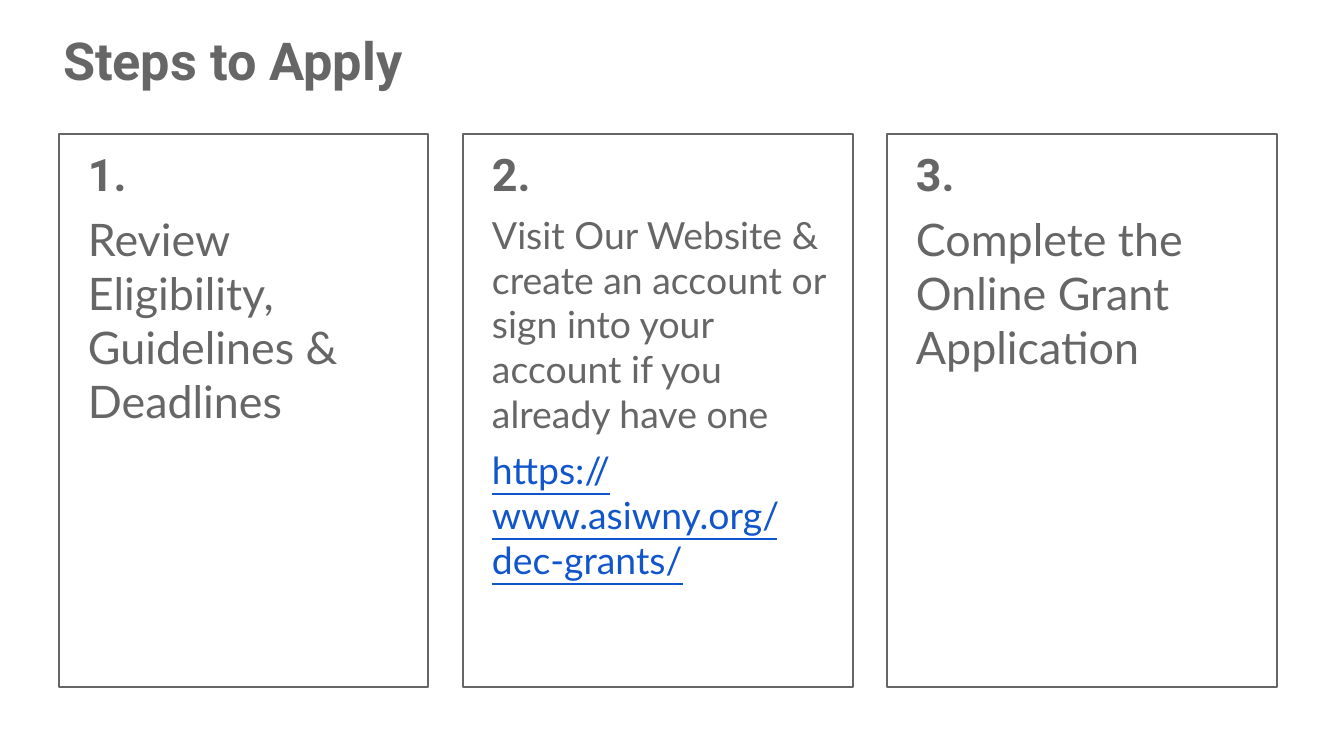
from pptx import Presentation
from pptx.dml.color import RGBColor
from pptx.enum.shapes import MSO_SHAPE
from pptx.enum.text import MSO_ANCHOR, MSO_AUTO_SIZE, PP_ALIGN
from pptx.util import Pt

RECTANGLE = MSO_SHAPE.RECTANGLE
TOP = MSO_ANCHOR.TOP
NO_FIT = MSO_AUTO_SIZE.NONE
LEFT = PP_ALIGN.LEFT

COLORS = {"gray": "666666", "white": "FFFFFF", "link": "1155CC"}
EMU_PER_PX = 914400 / 134.4
INSET = 13
INDENT = 16


def px(length):
    return round(length * EMU_PER_PX)


def write(frame, lines):
    frame.word_wrap = True
    frame.auto_size = NO_FIT
    frame.vertical_anchor = TOP
    frame.margin_left = frame.margin_right = px(INSET)
    frame.margin_top = frame.margin_bottom = px(INSET)
    for index, (text, font, size, bold, color) in enumerate(lines):
        paragraph = frame.add_paragraph() if index else frame.paragraphs[0]
        paragraph.alignment = LEFT
        paragraph.space_before = Pt(6 if index else 0)
        properties = paragraph._p.get_or_add_pPr()
        properties.set("marL", str(px(INDENT)))
        properties.set("indent", "0")
        run = paragraph.add_run()
        run.text = text
        run.font.name = font
        run.font.size = Pt(size)
        run.font.bold = bold
        run.font.underline = color == "link"
        run.font.color.rgb = RGBColor.from_string(COLORS[color])


presentation = Presentation()
presentation.slide_width = px(1344)
presentation.slide_height = px(756)
slide = presentation.slides.add_slide(presentation.slide_layouts[5])

heading = slide.shapes.title
heading.left, heading.top = px(34), px(15)
heading.width, heading.height = px(421), px(103)
write(heading.text_frame, [("Steps to Apply", "Roboto", 28, True, "gray")])

steps = [
    (59, 369, 24, [("Review Eligibility, Guidelines & Deadlines", "gray")]),
    (463, 390, 20, [
        ("Visit Our Website & create an account or sign into your account "
         "if you already have one", "gray"),
        ("https://www.asiwny.org/dec-grants/", "link"),
    ]),
    (887, 390, 24, [("Complete the Online Grant Application", "gray")]),
]

for number, (left, width, size, details) in enumerate(steps, 1):
    card = slide.shapes.add_shape(RECTANGLE, px(left), px(134), px(width), px(553))
    card.shadow.inherit = False
    card.fill.solid()
    card.fill.fore_color.rgb = RGBColor.from_string(COLORS["white"])
    card.line.color.rgb = RGBColor.from_string(COLORS["gray"])
    card.line.width = Pt(0.75)
    lines = [(f"{number}.", "Roboto", 24, True, "gray")]
    lines += [(text, "Lato", size, False, color) for text, color in details]
    write(card.text_frame, lines)

presentation.save("out.pptx")
